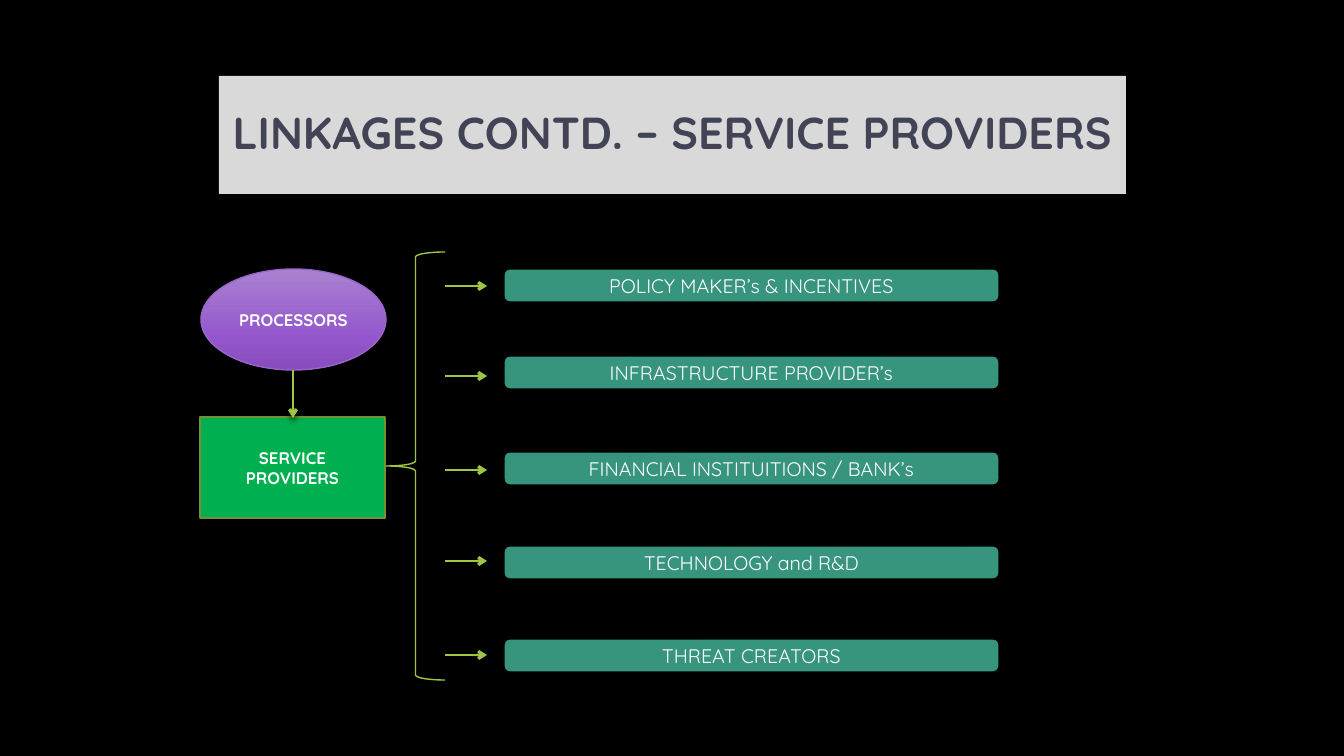
import copy

import lxml.etree
import pptx
import pptx.dml.color
import pptx.enum.shapes
import pptx.enum.text
import pptx.oxml
import pptx.oxml.ns
import pptx.util

RGB = pptx.dml.color.RGBColor
SHAPE = pptx.enum.shapes.MSO_SHAPE
PX = 914400 / 100.8  # EMU in one px
FONT = "Quicksand"

BLACK = RGB(0x00, 0x00, 0x00)
WHITE = RGB(0xFF, 0xFF, 0xFF)
TITLE_FILL = RGB(0xD9, 0xD9, 0xD9)
TITLE_TEXT = RGB(0x42, 0x44, 0x56)
LIME = RGB(0x9E, 0xC5, 0x44)
OLIVE = RGB(0x75, 0x92, 0x32)
TEAL = RGB(0x37, 0x94, 0x7D)
GREEN = RGB(0x00, 0xB0, 0x50)
VIOLET = RGB(0x9A, 0x66, 0xCA)
VIOLET_STOPS = [
    (0, RGB(0xA9, 0x81, 0xD1)),
    (0.69, RGB(0x94, 0x56, 0xCD)),
    (1, RGB(0x86, 0x4B, 0xBC)),
]

# Provider, top of its bar, height of its arrow
PROVIDERS = [
    ("POLICY MAKER’s & INCENTIVES", 269, 286),
    ("INFRASTRUCTURE PROVIDER’s", 356, 376),
    ("FINANCIAL INSTITUITIONS / BANK’s", 452, 470),
    ("TECHNOLOGY and R&D", 546, 561),
    ("THREAT CREATORS", 639, 655),
]

SHADOW = (
    '<a:effectLst xmlns:a="http://schemas.openxmlformats.org/drawingml/2006/main">'
    '<a:outerShdw blurRad="50800" dist="38100" dir="5400000" rotWithShape="0">'
    '<a:srgbClr val="000000"><a:alpha val="54000"/></a:srgbClr>'
    "</a:outerShdw></a:effectLst>"
)


def px(length):
    return pptx.util.Emu(round(length * PX))


def add_block(slide, kind, box, fill=None, line=None, width=1):
    block = slide.shapes.add_shape(kind, *map(px, box))
    block.shadow.inherit = False
    if fill is None:
        block.fill.background()
    else:
        block.fill.solid()
        block.fill.fore_color.rgb = fill
    if line is None:
        block.line.fill.background()
    else:
        block.line.color.rgb = line
        block.line.width = pptx.util.Pt(width)
    return block


def write(block, text, size, color=WHITE, bold=False, inset=10):
    frame = block.text_frame
    frame.word_wrap = True
    frame.vertical_anchor = pptx.enum.text.MSO_ANCHOR.MIDDLE
    frame.margin_left = frame.margin_right = px(inset)
    frame.margin_top = frame.margin_bottom = 0
    paragraph = frame.paragraphs[0]
    paragraph.text = text
    paragraph.alignment = pptx.enum.text.PP_ALIGN.CENTER
    paragraph.font.name = FONT
    paragraph.font.size = pptx.util.Pt(size)
    paragraph.font.bold = bold
    paragraph.font.color.rgb = color
    return paragraph


def add_arrow(slide, *ends):
    arrow = slide.shapes.add_connector(
        pptx.enum.shapes.MSO_CONNECTOR.STRAIGHT, *map(px, ends))
    arrow.line.color.rgb = LIME
    arrow.line.width = pptx.util.Pt(2)
    properties = arrow._element.spPr
    outline = properties.find(pptx.oxml.ns.qn("a:ln"))
    lxml.etree.SubElement(outline, pptx.oxml.ns.qn("a:tailEnd"), type="arrow")
    properties.append(pptx.oxml.parse_xml(SHADOW))


def add_title(slide, box):
    banner = add_block(slide, SHAPE.RECTANGLE, box, TITLE_FILL)
    heading = write(banner, "LINKAGES CONTD. – SERVICE PROVIDERS", 32,
                    TITLE_TEXT, bold=True, inset=5)
    heading.line_spacing = 0.9


def add_provider_list(slide, left, top, width, height):
    # Brace around the providers
    add_block(slide, SHAPE.LEFT_BRACE, (left, top, 59, height), line=LIME)
    # One arrow and one bar for each provider
    bar_left = left + 118
    for provider, bar_top, arrow_y in PROVIDERS:
        add_arrow(slide, left + 59, arrow_y, left + 101, arrow_y)
        bar = add_block(slide, SHAPE.ROUNDED_RECTANGLE,
                        (bar_left, bar_top, width - 118, 33), TEAL, BLACK)
        write(bar, provider, 14)


def add_chain(slide, left, top, width, height):
    node_height = 101
    service_top = top + height - node_height

    # Service providers
    service = add_block(slide, SHAPE.RECTANGLE,
                        (left, service_top, width, node_height), GREEN, OLIVE, 1.5)
    write(service, "SERVICE PROVIDERS", 12, bold=True, inset=24)

    # Processors, with a three-step gradient
    processors = add_block(slide, SHAPE.OVAL,
                           (left + 1, top, width, node_height), line=VIOLET)
    fill = processors.fill
    fill.gradient()
    fill.gradient_angle = 270
    stop_list = processors._element.spPr.find(".//" + pptx.oxml.ns.qn("a:gsLst"))
    stop_list.append(copy.deepcopy(stop_list[0]))
    for stop, (position, color) in zip(fill.gradient_stops, VIOLET_STOPS):
        stop.position = position
        stop.color.rgb = color
    write(processors, "PROCESSORS", 12, bold=True)

    # Link between the two
    center = left + width // 2 + 1
    add_arrow(slide, center, top + node_height, center, service_top + 1)


def main():
    deck = pptx.Presentation()
    deck.slide_width, deck.slide_height = px(1344), px(756)
    slide = deck.slides.add_slide(deck.slide_layouts[6])
    slide.background.fill.solid()
    slide.background.fill.fore_color.rgb = BLACK

    add_title(slide, (219, 76, 907, 118))
    add_provider_list(slide, 386, 252, 613, 428)
    add_chain(slide, 200, 269, 185, 249)
    deck.save("out.pptx")


if __name__ == "__main__":
    main()
